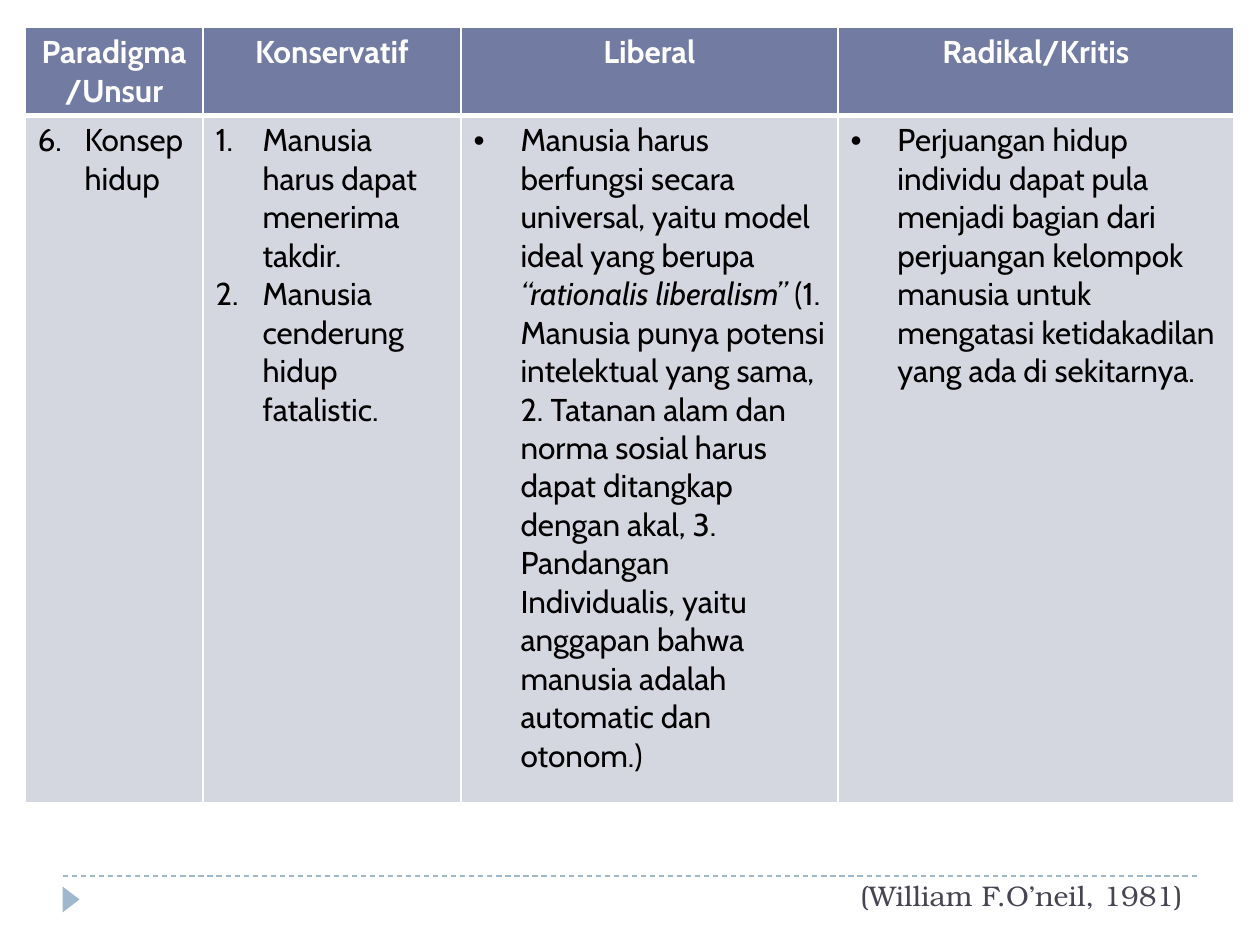
import lxml.etree
import pptx
import pptx.dml.color
import pptx.enum.dml
import pptx.enum.shapes
import pptx.enum.text
import pptx.oxml.ns
import pptx.util

EMU_PER_PX = 914400 / 126
COLUMN_WIDTHS = [178, 258, 377, 396]
ROW_HEIGHTS = [88, 688]
INDENT = 47
HEADERS = ["Paradigma/Unsur", "Konservatif", "Liberal", "Radikal/Kritis"]
NUMBER, BULLET = "buAutoNum", "buChar"
BODY = [
    (NUMBER, {"type": "arabicPeriod", "startAt": "6"}, [["Konsep hidup"]]),
    (NUMBER, {"type": "arabicPeriod"}, [
        ["Manusia harus dapat menerima takdir."],
        ["Manusia cenderung hidup fatalistic."],
    ]),
    (BULLET, {"char": "•"}, [[
        "Manusia harus berfungsi secara universal, yaitu model ideal yang berupa ",
        "“rationalis liberalism” ",
        "(1. Manusia punya potensi intelektual yang sama, 2. Tatanan alam dan norma "
        "sosial harus dapat ditangkap dengan akal, 3. Pandangan Individualis, yaitu "
        "anggapan bahwa manusia adalah automatic dan otonom.)",
    ]]),
    (BULLET, {"char": "•"}, [[
        "Perjuangan hidup individu dapat pula menjadi bagian dari perjuangan kelompok "
        "manusia untuk mengatasi ketidakadilan yang ada di sekitarnya.",
    ]]),
]


def px(length):
    """Turn pixels into EMU."""
    return pptx.util.Emu(round(length * EMU_PER_PX))


def color(value):
    """Turn a hex string into a colour."""
    return pptx.dml.color.RGBColor.from_string(value)


def add_element(parent, tag, **attributes):
    """Append a DrawingML element."""
    return lxml.etree.SubElement(parent, pptx.oxml.ns.qn("a:" + tag), attributes)


def style_font(paragraph, name, size, value, bold=False):
    """Set the font of a whole paragraph."""
    font = paragraph.font
    font.name, font.size, font.bold = name, pptx.util.Pt(size), bold
    font.color.rgb = color(value)


def style_cell(cell, fill, bottom):
    """Give a cell white borders and a solid fill."""
    properties = cell._tc.get_or_add_tcPr()
    for side, width in (("L", 1), ("R", 1), ("T", 1), ("B", bottom)):
        border = add_element(properties, "ln" + side, w=str(pptx.util.Pt(width)))
        add_element(add_element(border, "solidFill"), "srgbClr", val="FFFFFF")
    cell.fill.solid()
    cell.fill.fore_color.rgb = color(fill)


def fill_header(cell, text):
    """Write a column heading."""
    style_cell(cell, "727CA3", 3)
    paragraph = cell.text_frame.paragraphs[0]
    paragraph.add_run().text = text
    paragraph.alignment = pptx.enum.text.PP_ALIGN.CENTER
    style_font(paragraph, "Cabin", 18, "FFFFFF", True)


def fill_list(cell, marker, attributes, items):
    """Write a numbered or bulleted list whose every second run is italic."""
    style_cell(cell, "D5D7E0", 1)
    frame = cell.text_frame
    for index, item in enumerate(items):
        paragraph = frame.add_paragraph() if index else frame.paragraphs[0]
        properties = paragraph._p.get_or_add_pPr()
        properties.set("marL", str(px(INDENT)))
        properties.set("indent", str(px(-INDENT)))
        if marker == BULLET:
            add_element(properties, "buFont", typeface="Arial")
        add_element(properties, marker, **attributes)
        style_font(paragraph, "Cabin", 18, "000000")
        for position, text in enumerate(item):
            run = paragraph.add_run()
            run.text = text
            if position % 2:
                run.font.italic = True


def add_paradigm_table(slide, left, top):
    """Build the table that compares the paradigms."""
    table = slide.shapes.add_table(
        len(ROW_HEIGHTS), len(COLUMN_WIDTHS), px(left), px(top),
        px(sum(COLUMN_WIDTHS)), px(sum(ROW_HEIGHTS))).table
    table.horz_banding = False
    for column, width in zip(table.columns, COLUMN_WIDTHS):
        column.width = px(width)
    for row, height in zip(table.rows, ROW_HEIGHTS):
        row.height = px(height)
    for index, (header, body) in enumerate(zip(HEADERS, BODY)):
        fill_header(table.cell(0, index), header)
        fill_list(table.cell(1, index), *body)


def add_footer(slide, left, top, width):
    """Draw the dashed rule, the triangle marker and the source citation."""
    rule = slide.shapes.add_connector(
        pptx.enum.shapes.MSO_CONNECTOR.STRAIGHT,
        px(left), px(top), px(left + width), px(top))
    rule.line.color.rgb = color("9FB8CD")
    rule.line.width = pptx.util.Pt(0.75)
    rule.line.dash_style = pptx.enum.dml.MSO_LINE.DASH
    add_element(rule._element.spPr, "effectLst")

    marker = slide.shapes.add_shape(
        pptx.enum.shapes.MSO_SHAPE.ISOSCELES_TRIANGLE,
        px(left - 5), px(top + 15), px(26), px(17))
    marker.rotation = 90
    marker.shadow.inherit = False
    marker.fill.solid()
    marker.fill.fore_color.rgb = color("9FB8CD")
    marker.line.fill.background()

    citation = slide.shapes.add_textbox(
        px(left + 785), px(top - 17), px(367), px(59))
    frame = citation.text_frame
    frame.word_wrap = True
    frame.vertical_anchor = pptx.enum.text.MSO_ANCHOR.BOTTOM
    paragraph = frame.paragraphs[0]
    paragraph.add_run().text = "(William F.O’neil, 1981)"
    style_font(paragraph, "TeX Gyre Bonum", 16.2, "464653")


def main():
    """Build and save the slide."""
    presentation = pptx.Presentation()
    presentation.slide_width, presentation.slide_height = px(1260), px(945)
    slide = presentation.slides.add_slide(presentation.slide_layouts[6])
    add_footer(slide, 63, 876, 1134)
    add_paradigm_table(slide, 25, 27)
    presentation.save("out.pptx")


if __name__ == "__main__":
    main()
